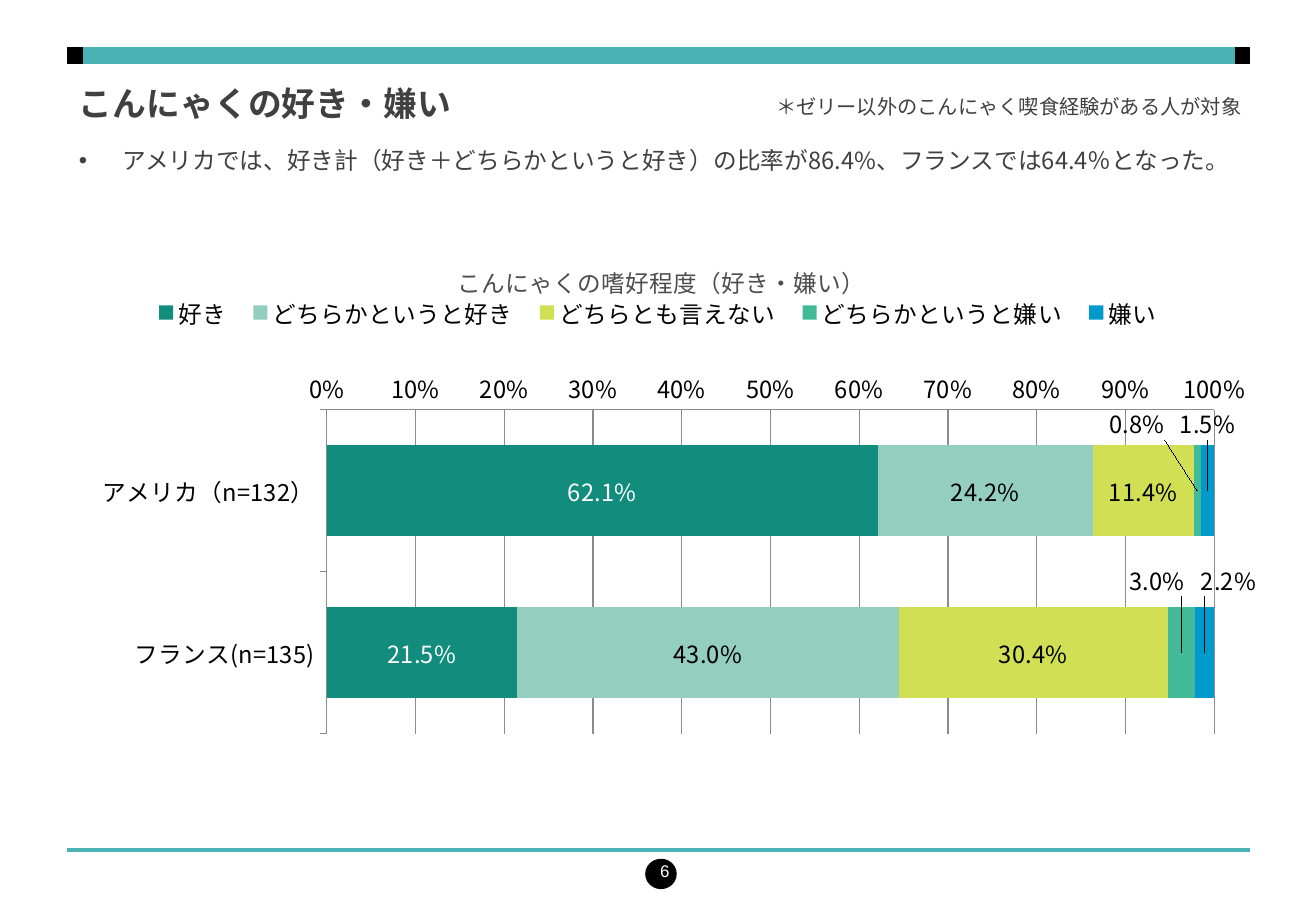
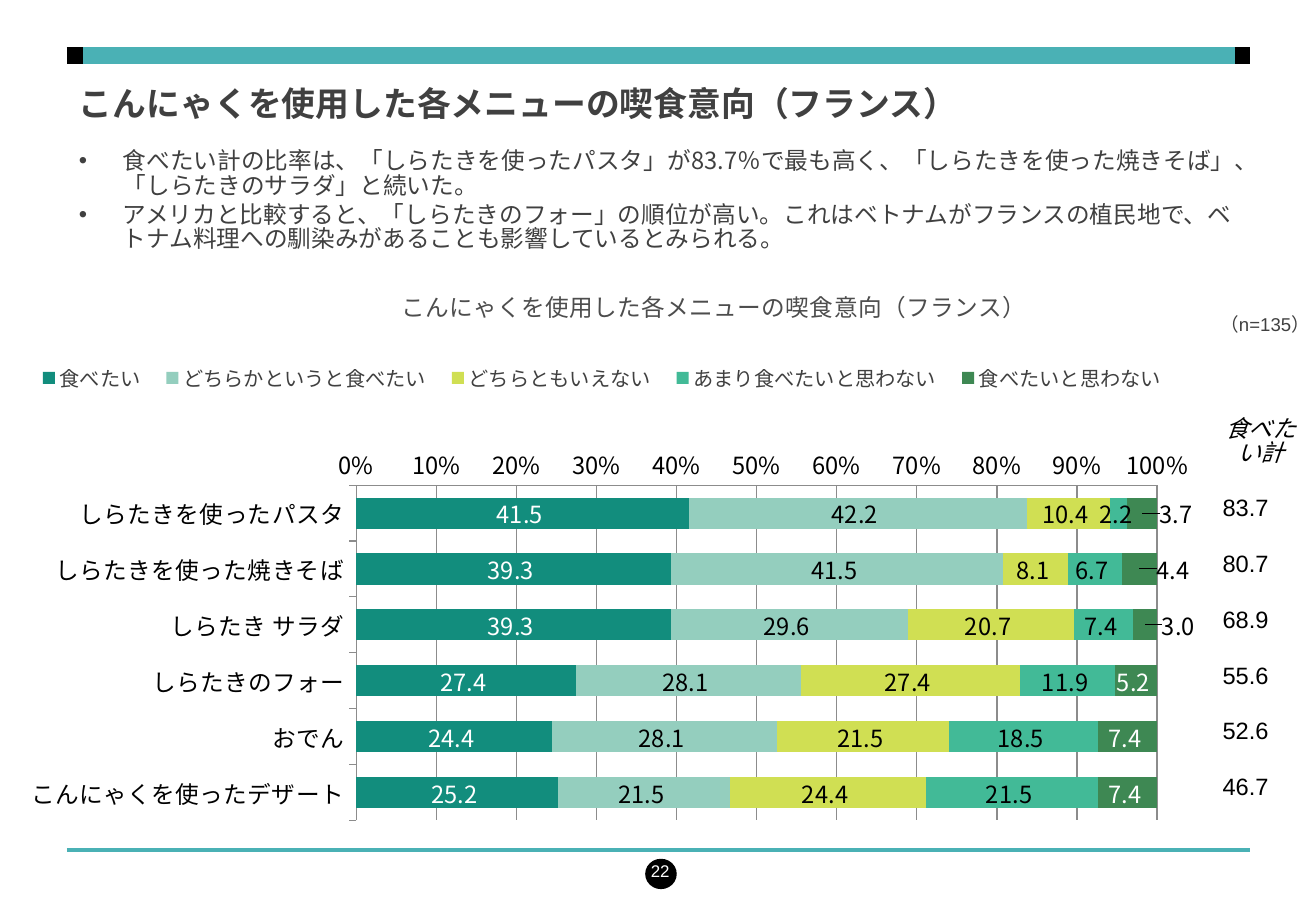
import lxml.etree
import pptx
import pptx.chart.data
import pptx.dml.color
import pptx.enum.chart
import pptx.enum.shapes
import pptx.enum.text
import pptx.oxml.ns
import pptx.util

EMU_PER_PX = 9144
TEAL, BLACK, WHITE = "4AB1B5", "000000", "FFFFFF"
TEXT, CHART_TITLE, AXIS = "404040", "4D4D4D", "8C8C8C"
GREEN, MINT, LIME, JADE, BLUE, FOREST = (
    "128D7D", "94CEBE", "D0DF53", "42BA97", "0099CC", "3E8853")
JAPANESE, LATIN = "Noto Sans CJK JP", "Arial"
ALIGN = pptx.enum.text.PP_ALIGN
ANCHOR = pptx.enum.text.MSO_ANCHOR
qn = pptx.oxml.ns.qn


def px(length):
    return pptx.util.Emu(length * EMU_PER_PX)


def box(*lengths):
    return [px(length) for length in lengths]


def rgb(color):
    return pptx.dml.color.RGBColor.from_string(color)


def style(font, size, color, name=JAPANESE, bold=False, italic=False):
    font.size = pptx.util.Pt(size)
    font.color.rgb = rgb(color)
    font.bold, font.italic, font.name = bold, italic, name
    east_asian = lxml.etree.SubElement(font._element, qn("a:ea"))
    east_asian.set("typeface", JAPANESE)


def set_frame(frame, anchor, margin_x=5, margin_y=5):
    frame.word_wrap = True
    frame.auto_size = pptx.enum.text.MSO_AUTO_SIZE.NONE
    frame.vertical_anchor = anchor
    frame.margin_left = frame.margin_right = px(margin_x)
    frame.margin_top = frame.margin_bottom = px(margin_y)


def move(placeholder, left, top, width, height):
    placeholder.left, placeholder.top = box(left, top)
    placeholder.width, placeholder.height = box(width, height)


def add_rule(slide, left, right, y, color, weight):
    rule = slide.shapes.add_connector(
        pptx.enum.shapes.MSO_CONNECTOR.STRAIGHT, *box(left, y, right, y))
    rule.line.color.rgb = rgb(color)
    rule.line.width = pptx.util.Pt(weight)
    lxml.etree.SubElement(rule._element.spPr, qn("a:effectLst"))


def add_note(slide, place, text, size, color=TEXT, align=ALIGN.RIGHT, italic=False):
    frame = slide.shapes.add_textbox(*box(*place)).text_frame
    set_frame(frame, ANCHOR.MIDDLE)
    frame.text = text
    paragraph = frame.paragraphs[0]
    paragraph.alignment = align
    paragraph.line_spacing = 0.85
    style(paragraph.font, size, color, LATIN, italic=italic)


def add_page(deck, number, title, points):
    """Add a slide with the shared bands, page number, title and bullets."""
    slide = deck.slides.add_slide(deck.slide_layouts[1])
    add_rule(slide, 55, 1029, 46, TEAL, 10)
    add_rule(slide, 55, 1029, 700, TEAL, 2.25)
    for left in (55, 1016):
        add_rule(slide, left, left + 13, 46, BLACK, 10)
    badge = slide.shapes.add_shape(
        pptx.enum.shapes.MSO_SHAPE.OVAL, *box(531, 707, 26, 25))
    badge.shadow.inherit = False
    badge.fill.solid()
    badge.fill.fore_color.rgb = rgb(BLACK)
    badge.line.fill.background()
    add_note(slide, (518, 698, 38, 40), str(number), 10, WHITE)

    heading = slide.shapes.title
    move(heading, 54, 67, 975, 43)
    set_frame(heading.text_frame, ANCHOR.TOP, 11)
    heading.text_frame.text = title
    paragraph = heading.text_frame.paragraphs[0]
    paragraph.alignment = ALIGN.LEFT
    paragraph.line_spacing = 0.9
    style(paragraph.font, 20, TEXT, bold=True)

    body = slide.placeholders[1]
    move(body, 54, 119, 975, 113)
    set_frame(body.text_frame, ANCHOR.TOP, 11)
    body.text_frame.text = "\n".join(points)
    for index, paragraph in enumerate(body.text_frame.paragraphs):
        paragraph.line_spacing = 0.85
        paragraph.space_before = pptx.util.Pt(3 if index else 0)
        properties = paragraph._p.get_or_add_pPr()
        properties.set("marL", str(px(36)))
        properties.set("indent", str(px(-36)))
        lxml.etree.SubElement(properties, qn("a:buChar")).set("char", "•")
        style(paragraph.font, 14, TEXT)
    return slide


def set_layout(part, index, edge=True, inner=False, **fractions):
    """Give a chart part a manual layout, stored as its child at index."""
    for old in part.findall(qn("c:layout")):
        part.remove(old)
    layout = lxml.etree.Element(qn("c:layout"))
    manual = lxml.etree.SubElement(layout, qn("c:manualLayout"))
    settings = {"layoutTarget": "inner"} if inner else {}
    if edge:
        settings.update(xMode="edge", yMode="edge")
    for tag, value in {**settings, **fractions}.items():
        lxml.etree.SubElement(manual, qn("c:" + tag)).set("val", str(value))
    part.insert(index, layout)


def format_series(series, color, label_color, number_format, moved_labels):
    """moved_labels maps a row to its label's x and y shift and colour."""
    series.format.fill.solid()
    series.format.fill.fore_color.rgb = rgb(color)
    center = pptx.enum.chart.XL_LABEL_POSITION.CENTER
    labels = series.data_labels
    labels.show_value = True
    labels.number_format = number_format
    labels.number_format_is_linked = False
    labels.position = center
    style(labels.font, 14, label_color)
    for row, (x, y, point_color) in moved_labels.items():
        label = series.points[row].data_label
        style(label.font, 14, point_color)
        label.position = center
        if x or y:
            set_layout(label._get_or_add_dLbl(), 1, edge=False, x=x, y=y)


def format_axes(chart):
    rows, shares = chart.category_axis, chart.value_axis
    rows.reverse_order = True
    rows.major_tick_mark = pptx.enum.chart.XL_TICK_MARK.OUTSIDE
    shares.major_tick_mark = pptx.enum.chart.XL_TICK_MARK.NONE
    shares.has_major_gridlines = True
    shares.minimum_scale, shares.maximum_scale, shares.major_unit = 0, 1, 0.1
    shares.tick_labels.number_format = "0%"
    shares.tick_labels.number_format_is_linked = False
    for part in (rows, shares, shares.major_gridlines):
        part.format.line.color.rgb = rgb(AXIS)
        part.format.line.width = pptx.util.Pt(0.75)


def add_share_chart(slide, place, title, categories, answers, number_format,
                    title_at, legend_at, plot_at, legend_font):
    data = pptx.chart.data.CategoryChartData(number_format=number_format)
    data.categories = categories
    for name, values, *_ in answers:
        data.add_series(name, values)
    chart = slide.shapes.add_chart(
        pptx.enum.chart.XL_CHART_TYPE.BAR_STACKED_100, *box(*place), data).chart
    style(chart.font, 14, BLACK)

    chart.has_title = True
    chart.chart_title.text_frame.text = title
    style(chart.chart_title.text_frame.paragraphs[0].font, 14, CHART_TITLE)
    set_layout(chart.chart_title._element, 1, **title_at)

    chart.has_legend = True
    chart.legend.position = pptx.enum.chart.XL_LEGEND_POSITION.TOP
    chart.legend.include_in_layout = False
    style(chart.legend.font, *legend_font)
    set_layout(chart.legend._element, 1, **legend_at)

    set_layout(chart._chartSpace.chart.plotArea, 0, inner=True, **plot_at)
    format_axes(chart)
    plot = chart.plots[0]
    plot.gap_width, plot.overlap, plot.vary_by_categories = 79, 100, False
    for series, (_, _, color, label_color, moved) in zip(plot.series, answers):
        format_series(series, color, label_color, number_format, moved)


def add_totals(slide, left, top, width, row_height, totals):
    table = slide.shapes.add_table(
        len(totals), 1, *box(left, top, width, row_height * len(totals))).table
    table.first_row = table.horz_banding = False
    for row, total in enumerate(totals):
        cell = table.cell(row, 0)
        cell.fill.background()
        cell.vertical_anchor = ANCHOR.MIDDLE
        cell.margin_left, cell.margin_right = box(0, 8)
        cell.margin_top, cell.margin_bottom = box(1, 0)
        cell.text = total
        paragraph = cell.text_frame.paragraphs[0]
        paragraph.alignment = ALIGN.RIGHT
        style(paragraph.font, 14, BLACK, LATIN)


def add_liking_page(deck):
    slide = add_page(deck, 6, "こんにゃくの好き・嫌い", [
        "アメリカでは、好き計（好き＋どちらかというと好き）の比率が86.4%、"
        "フランスでは64.4％となった。"])
    answers = [
        ("好き", (62.1, 21.5), GREEN, WHITE, {}),
        ("どちらかというと好き", (24.2, 43.0), MINT, BLACK, {}),
        ("どちらとも言えない", (11.4, 30.4), LIME, BLACK, {}),
        ("どちらかというと嫌い", (0.8, 3.0), JADE, BLACK,
         {0: (-0.05, -0.13, BLACK), 1: (-0.02, -0.14, BLACK)}),
        ("嫌い", (1.5, 2.2), BLUE, BLACK,
         {0: (0, -0.13, BLACK), 1: (0.02, -0.14, BLACK)}),
    ]
    add_share_chart(
        slide, (46, 191, 991, 428), "こんにゃくの嗜好程度（好き・嫌い）",
        ["アメリカ（n=132）", "フランス(n=135)"], answers, '0.0"%"',
        title_at=dict(x=0.33, y=0.05),
        legend_at=dict(x=0.07, y=0.12, w=0.86, h=0.07),
        plot_at=dict(x=0.225, y=0.342, w=0.737, h=0.623),
        legend_font=(14, BLACK))
    add_note(slide, (300, 74, 727, 30),
             "＊ゼリー以外のこんにゃく喫食経験がある人が対象", 12)


def add_menu_page(deck):
    title = "こんにゃくを使用した各メニューの喫食意向（フランス）"
    slide = add_page(deck, 22, title, [
        "食べたい計の比率は、「しらたきを使ったパスタ」が83.7％で最も高く、"
        "「しらたきを使った焼きそば」、「しらたきのサラダ」と続いた。",
        "アメリカと比較すると、「しらたきのフォー」の順位が高い。これはベトナムが"
        "フランスの植民地で、ベトナム料理への馴染みがあることも影響しているとみられる。"])
    menus = ["しらたきを使ったパスタ", "しらたきを使った焼きそば", "しらたき サラダ",
             "しらたきのフォー", "おでん", "こんにゃくを使ったデザート"]
    outside, inside = (0.03, 0, BLACK), (0, 0, WHITE)
    answers = [
        ("食べたい", (41.5, 39.3, 39.3, 27.4, 24.4, 25.2), GREEN, WHITE, {}),
        ("どちらかというと食べたい", (42.2, 41.5, 29.6, 28.1, 28.1, 21.5),
         MINT, BLACK, {}),
        ("どちらともいえない", (10.4, 8.1, 20.7, 27.4, 21.5, 24.4), LIME, BLACK, {}),
        ("あまり食べたいと思わない", (2.2, 6.7, 7.4, 11.9, 18.5, 21.5),
         JADE, BLACK, {}),
        ("食べたいと思わない", (3.7, 4.4, 3.0, 5.2, 7.4, 7.4), FOREST, BLACK,
         dict(enumerate([outside] * 3 + [inside] * 3))),
    ]
    add_share_chart(
        slide, (0, 218, 991, 474), title, menus, answers, "0.0_ ",
        title_at=dict(x=0.33, y=0.03),
        legend_at=dict(x=0.02, y=0.17, w=0.96, h=0.05),
        plot_at=dict(x=0.296, y=0.383, w=0.665, h=0.582),
        legend_font=(12, TEXT))
    add_note(slide, (997, 336, 81, 57), "食べたい計", 14, BLACK,
             ALIGN.CENTER, italic=True)
    add_note(slide, (968, 254, 115, 29), "（n=135）", 11)
    add_totals(slide, 1006, 395, 46, 46,
               ["83.7", "80.7", "68.9", "55.6", "52.6", "46.7"])


def main():
    deck = pptx.Presentation()
    deck.slide_width, deck.slide_height = box(1083, 750)
    add_liking_page(deck)
    add_menu_page(deck)
    deck.save("out.pptx")


if __name__ == "__main__":
    main()
